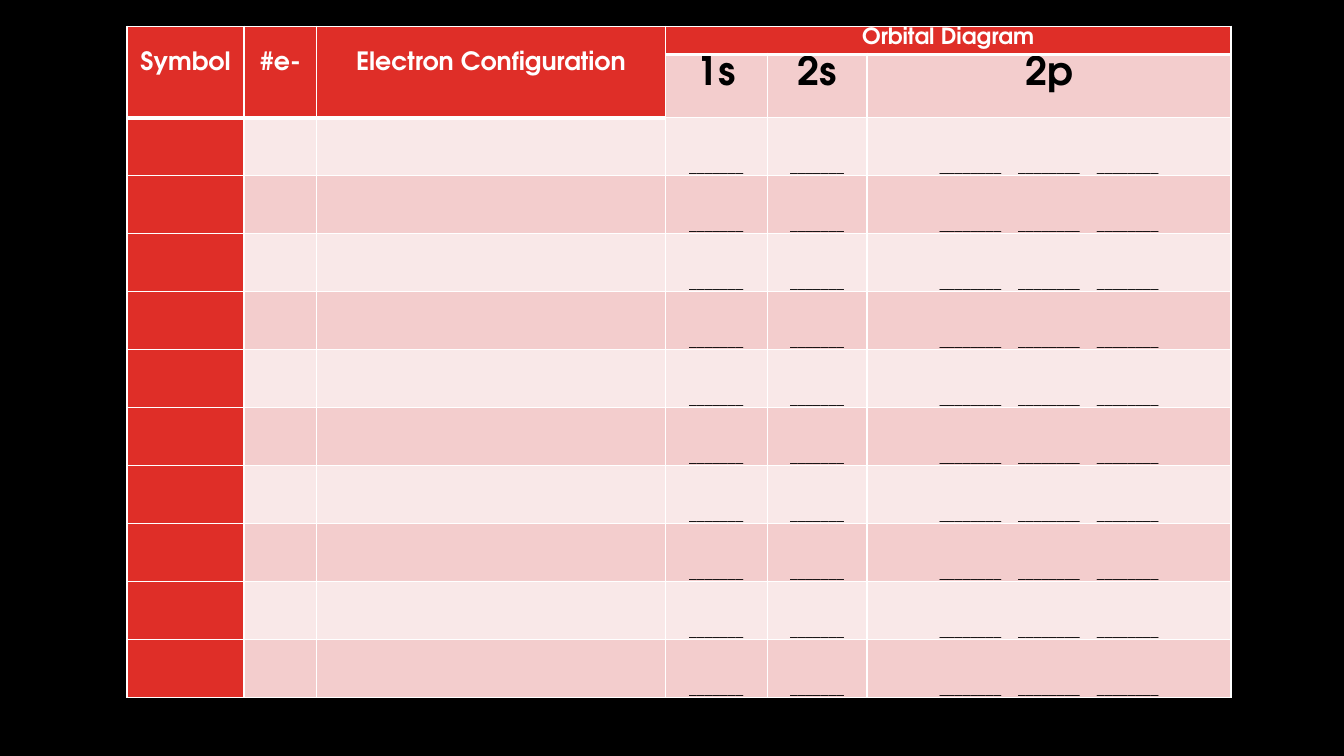
from lxml.etree import SubElement
from pptx import Presentation
from pptx.dml.color import RGBColor
from pptx.enum.text import MSO_ANCHOR as Anchor, PP_ALIGN as Align
from pptx.oxml.ns import qn
from pptx.util import Inches, Pt

BLACK = RGBColor(0x00, 0x00, 0x00)
WHITE = RGBColor(0xFF, 0xFF, 0xFF)
RED = RGBColor(0xDF, 0x2E, 0x28)
PINK = RGBColor(0xF3, 0xCD, 0xCD)
PALE_PINK = RGBColor(0xF9, 0xE8, 0xE8)
FONT = "TeX Gyre Adventor"

COLUMN_WIDTHS = [1.16, 0.72, 3.46, 1.01, 0.99, 3.61]
HEADER_HEIGHTS = [0.28, 0.63]
ELEMENT_COUNT = 10
BODY_HEIGHT = 5.75
ROW_HEIGHTS = HEADER_HEIGHTS + [BODY_HEIGHT / ELEMENT_COUNT] * ELEMENT_COUNT
HEADINGS = ["Symbol", "#e-", "Electron Configuration"]
ORBITALS = ["1s", "2s", "2p"]
SINGLE_BLANK = "_" * 7
TRIPLE_BLANK = ("\t" + "_" * 8) * 3
TRIPLE_STOPS = [0.65, 1.43, 2.21]


def set_borders(cell, top=1, bottom=1):
    properties = cell._tc.get_or_add_tcPr()
    for tag, width in (("a:lnL", 1), ("a:lnR", 1), ("a:lnT", top), ("a:lnB", bottom)):
        line = SubElement(properties, qn(tag), w=str(Pt(width)))
        fill = SubElement(line, qn("a:solidFill"))
        SubElement(fill, qn("a:srgbClr"), val=str(WHITE))


def add_tab_stops(paragraph, positions):
    tabs = SubElement(paragraph._p.get_or_add_pPr(), qn("a:tabLst"))
    for position in positions:
        SubElement(tabs, qn("a:tab"), pos=str(Inches(position)), algn="l")


def write_cell(cell, text, size=18, color=BLACK, bold=True, top=0,
               anchor=Anchor.TOP, align=Align.CENTER, stops=()):
    cell.margin_left = cell.margin_right = Inches(0.07)
    cell.margin_top = Inches(top)
    cell.margin_bottom = 0
    cell.vertical_anchor = anchor
    paragraph = cell.text_frame.paragraphs[0]
    paragraph.alignment = align
    paragraph.line_spacing = 1.07
    if stops:
        add_tab_stops(paragraph, stops)
    run = paragraph.add_run()
    run.text = text
    run.font.name = FONT
    run.font.size = Pt(size)
    run.font.bold = bold
    run.font.color.rgb = color


def add_orbital_table(slide):
    frame = slide.shapes.add_table(
        len(ROW_HEIGHTS), len(COLUMN_WIDTHS), Inches(1.26), Inches(0.26),
        Inches(sum(COLUMN_WIDTHS)), Inches(sum(ROW_HEIGHTS)))
    table = frame.table
    table.first_row = table.horz_banding = False
    for column, width in zip(table.columns, COLUMN_WIDTHS):
        column.width = Inches(width)
    for row, height in zip(table.rows, ROW_HEIGHTS):
        row.height = Inches(height)
    return table


def format_cells(table):
    for row_index in range(len(ROW_HEIGHTS)):
        for column_index in range(len(COLUMN_WIDTHS)):
            cell = table.cell(row_index, column_index)
            heading_end = 1 if column_index < len(HEADINGS) else 0
            set_borders(cell,
                        top=3 if row_index == heading_end + 1 else 1,
                        bottom=3 if row_index == heading_end else 1)
            cell.fill.solid()
            if column_index == 0 or row_index <= heading_end:
                color = RED
            else:
                color = PINK if row_index % 2 else PALE_PINK
            cell.fill.fore_color.rgb = color


def write_headings(table):
    for column_index, heading in enumerate(HEADINGS):
        cell = table.cell(0, column_index)
        cell.merge(table.cell(1, column_index))
        write_cell(cell, heading, color=WHITE, top=0.24)
    diagram = table.cell(0, 3)
    diagram.merge(table.cell(0, 5))
    write_cell(diagram, "Orbital Diagram", size=16, color=WHITE)
    for column_index, orbital in enumerate(ORBITALS, start=3):
        write_cell(table.cell(1, column_index), orbital, size=28)


def write_blanks(table):
    blank_format = dict(size=11, bold=False, anchor=Anchor.BOTTOM)
    for row_index in range(len(HEADER_HEIGHTS), len(ROW_HEIGHTS)):
        for column_index in (3, 4):
            write_cell(table.cell(row_index, column_index), SINGLE_BLANK, **blank_format)
        write_cell(table.cell(row_index, 5), TRIPLE_BLANK, align=Align.LEFT,
                   stops=TRIPLE_STOPS, **blank_format)


def main():
    presentation = Presentation()
    presentation.slide_width = Inches(13.33)
    presentation.slide_height = Inches(7.5)
    slide = presentation.slides.add_slide(presentation.slide_layouts[6])
    slide.background.fill.solid()
    slide.background.fill.fore_color.rgb = BLACK
    table = add_orbital_table(slide)
    format_cells(table)
    write_headings(table)
    write_blanks(table)
    presentation.save("out.pptx")


if __name__ == "__main__":
    main()
